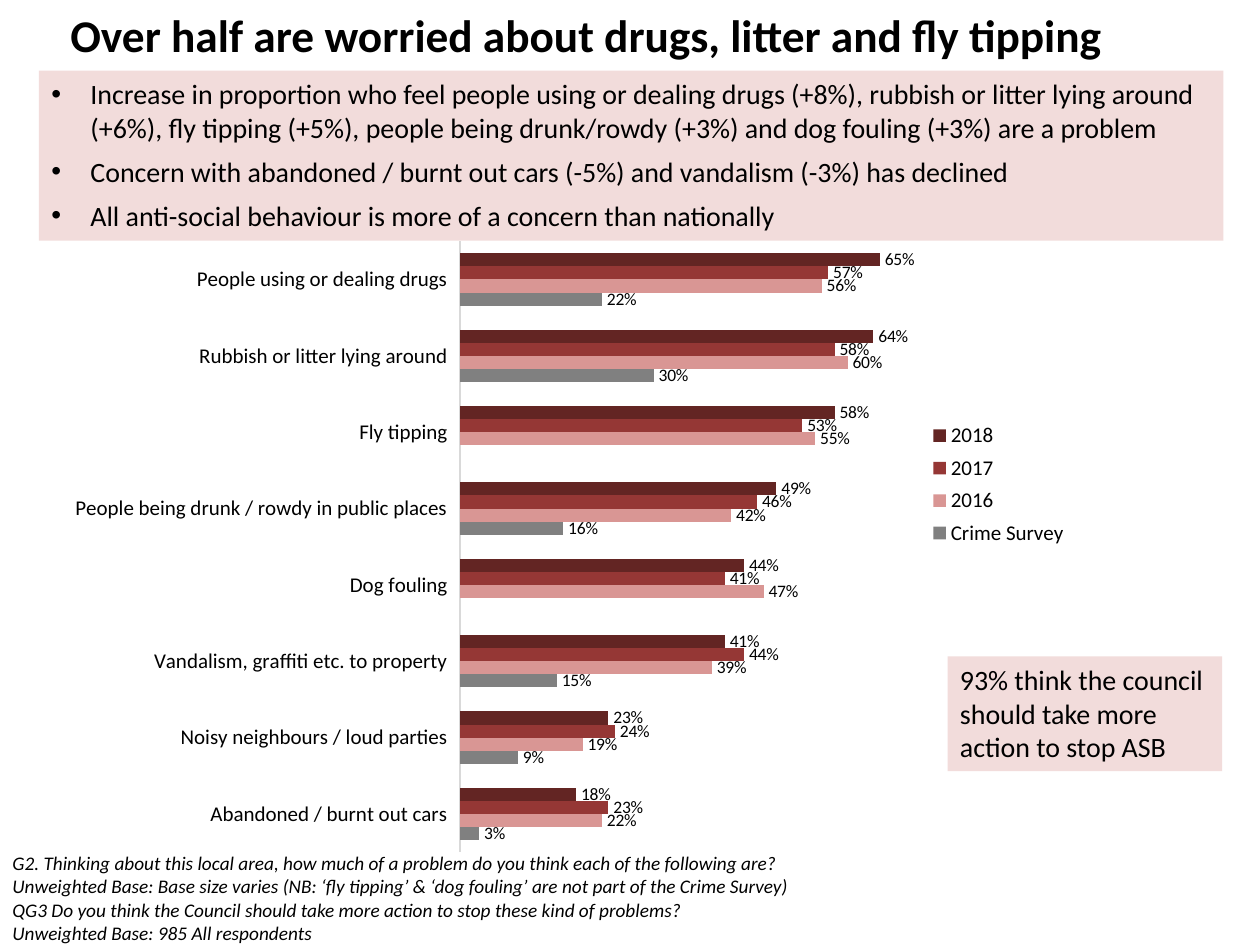
from dataclasses import dataclass
from typing import Optional

from lxml.etree import SubElement
from pptx import Presentation
from pptx.chart.data import CategoryChartData
from pptx.dml.color import RGBColor
from pptx.enum.chart import XL_CHART_TYPE as ChartType, XL_LABEL_POSITION as LabelPos
from pptx.enum.chart import XL_LEGEND_POSITION as LegendPos, XL_TICK_LABEL_POSITION as TickLabelPos
from pptx.enum.chart import XL_TICK_MARK as TickMark
from pptx.enum.shapes import MSO_SHAPE as Shape
from pptx.enum.text import MSO_ANCHOR as Anchor, PP_ALIGN as Align
from pptx.oxml.ns import qn
from pptx.util import Inches, Pt

COLS, ROWS = 100, 75
FONT, BLACK, PINK = "Calibri", "000000", "F2DCDB"


@dataclass(frozen=True)
class Area:
    """A place on the slide, in columns and rows of the grid."""
    left: float
    top: float
    width: float
    height: float


@dataclass(frozen=True)
class Note:
    """A block of paragraphs and its format."""
    area: Area
    lines: tuple[str, ...]
    size: float = 16
    fill: Optional[str] = None
    bold: bool = False
    italic: bool = False
    bullet: bool = False
    space: float = 0


@dataclass(frozen=True)
class Survey:
    """One series of the chart, in whole percent."""
    name: str
    color: str
    values: tuple[Optional[int], ...]


NOTES = (
    Note(Area(4.6, 0.1, 90.3, 6.3),
         ("Over half are worried about drugs, litter and fly tipping",), size=25.9, bold=True),
    Note(Area(0, 67.1, 73.2, 8.4),
         ("G2. Thinking about this local area, how much of a problem do you think each of the following are?",
          "Unweighted Base: Base size varies (NB: ‘fly tipping’ & ‘dog fouling’ are not part of the Crime Survey)",
          "QG3 Do you think the Council should take more action to stop these kind of problems?",
          "Unweighted Base: 985 All respondents"), size=11, italic=True),
    Note(Area(3.1, 5.6, 94, 13.5),
         ("Increase in proportion who feel people using or dealing drugs (+8%), rubbish or litter lying around "
          "(+6%), fly tipping (+5%), people being drunk/rowdy (+3%) and dog fouling (+3%) are a problem",
          "Concern with abandoned / burnt out cars (-5%) and vandalism (-3%) has declined",
          "All anti-social behaviour is more of a concern than nationally"),
         fill=PINK, bullet=True, space=6),
    Note(Area(75.2, 52.1, 21.8, 9.1),
         ("93% think the council should take more action to stop ASB",), fill=PINK),
)
CHART = Area(5, 18.1, 81.3, 50.6)
PLOT = Area(36.5, 19.15, 35.9, 48.5)
LEGEND = Area(72.5, 33, 13.5, 10.9)
PROBLEMS = ("Abandoned / burnt out cars", "Noisy neighbours / loud parties",
            "Vandalism, graffiti etc. to property", "Dog fouling",
            "People being drunk / rowdy in public places", "Fly tipping",
            "Rubbish or litter lying around", "People using or dealing drugs")
SURVEYS = (
    Survey("Crime Survey", "808080", (3, 9, 15, None, 16, None, 30, 22)),
    Survey("2016", "D99694", (22, 19, 39, 47, 42, 55, 60, 56)),
    Survey("2017", "953735", (23, 24, 44, 41, 46, 53, 58, 57)),
    Survey("2018", "632523", (18, 23, 41, 44, 49, 58, 64, 65)),
)


def paint(fmt, color: str) -> None:
    """Give a fill one solid colour."""
    fmt.solid()
    fmt.fore_color.rgb = RGBColor.from_string(color)


def style(font, size: float, *, bold: bool = False, italic: bool = False) -> None:
    """Set the typeface, size, weight and colour of a font."""
    font.name, font.size, font.bold, font.italic = FONT, Pt(size), bold, italic
    paint(font.fill, BLACK)


def place(prs, area: Area) -> tuple[int, int, int, int]:
    """Turn grid units into slide lengths."""
    col, row = prs.slide_width / COLS, prs.slide_height / ROWS
    return (round(area.left * col), round(area.top * row),
            round(area.width * col), round(area.height * row))


def write(tf, lines: tuple[str, ...], *, size: float, bold: bool, italic: bool,
          bullet: bool, space: float) -> None:
    """Fill a text frame with one paragraph a line."""
    tf.word_wrap, tf.vertical_anchor = True, Anchor.TOP
    for i, text in enumerate(lines):
        p = tf.add_paragraph() if i else tf.paragraphs[0]
        p.alignment = Align.LEFT
        if i:
            p.space_before = Pt(space)
        if bullet:
            pPr = p._p.get_or_add_pPr()
            pPr.set("marL", str(Inches(0.31)))
            pPr.set("indent", str(-Inches(0.31)))
            SubElement(pPr, qn("a:buFont"), typeface="Arial")
            SubElement(pPr, qn("a:buChar"), char="•")
        r = p.add_run()
        r.text = text
        style(r.font, size, bold=bold, italic=italic)


def draw_note(prs, s, note: Note) -> None:
    """Draw a text block, on a coloured rectangle if it has a fill."""
    box = place(prs, note.area)
    if note.fill:
        sp = s.shapes.add_shape(Shape.RECTANGLE, *box)
        sp.shadow.inherit = False
        paint(sp.fill, note.fill)
        sp.line.fill.background()
    else:
        sp = s.shapes.add_textbox(*box)
    write(sp.text_frame, note.lines, size=note.size, bold=note.bold,
          italic=note.italic, bullet=note.bullet, space=note.space)


def fix_layout(parent, area: Area, index: int, inner: bool = False) -> None:
    """Pin a part of the chart to an area of the slide grid."""
    for old in parent.findall(qn("c:layout")):
        parent.remove(old)
    layout = parent.makeelement(qn("c:layout"))
    parent.insert(index, layout)
    manual = SubElement(layout, qn("c:manualLayout"))
    if inner:
        SubElement(manual, qn("c:layoutTarget"), val="inner")
    for tag in ("xMode", "yMode"):
        SubElement(manual, qn(f"c:{tag}"), val="edge")
    shares = {"x": (area.left - CHART.left) / CHART.width,
              "y": (area.top - CHART.top) / CHART.height,
              "w": area.width / CHART.width, "h": area.height / CHART.height}
    for tag, share in shares.items():
        SubElement(manual, qn(f"c:{tag}"), val=f"{share:.4f}")


def draw_chart(prs, s) -> None:
    """Draw the clustered bars with labels and legend."""
    data = CategoryChartData(number_format="0%")
    data.categories = PROBLEMS
    for survey in SURVEYS:
        data.add_series(survey.name, [None if v is None else v / 100 for v in survey.values])
    chart = s.shapes.add_chart(ChartType.BAR_CLUSTERED, *place(prs, CHART), data).chart
    style(chart.font, 10)
    chart.has_title = False
    plot = chart.plots[0]
    plot.gap_width, plot.overlap, plot.vary_by_categories = 182, 0, False
    for series, survey in zip(plot.series, SURVEYS):
        paint(series.format.fill, survey.color)
        series.invert_if_negative = False
        labels = series.data_labels
        labels.show_value, labels.position = True, LabelPos.OUTSIDE_END
        labels.number_format, labels.number_format_is_linked = "0%", False
        style(labels.font, 10)
    cat, val = chart.category_axis, chart.value_axis
    cat.major_tick_mark = cat.minor_tick_mark = TickMark.NONE
    cat.tick_label_position = TickLabelPos.LOW
    style(cat.tick_labels.font, 12)
    paint(cat.format.line.fill, "D9D9D9")
    cat.format.line.width = Pt(0.75)
    val.minimum_scale, val.maximum_scale = 0, 0.7
    val.has_major_gridlines = val.visible = False
    chart.has_legend = True
    legend = chart.legend
    legend.position, legend.include_in_layout = LegendPos.RIGHT, False
    style(legend.font, 12)
    fix_layout(chart._chartSpace.chart.plotArea, PLOT, 0, inner=True)
    fix_layout(legend._element, LEGEND, 1)


def main() -> None:
    """Build and save the slide."""
    prs = Presentation()
    prs.slide_width, prs.slide_height = Inches(10), Inches(7.5)
    s = prs.slides.add_slide(prs.slide_layouts[6])
    *back, callout = NOTES
    for note in back:
        draw_note(prs, s, note)
    draw_chart(prs, s)
    draw_note(prs, s, callout)
    prs.save("out.pptx")


if __name__ == "__main__":
    main()
